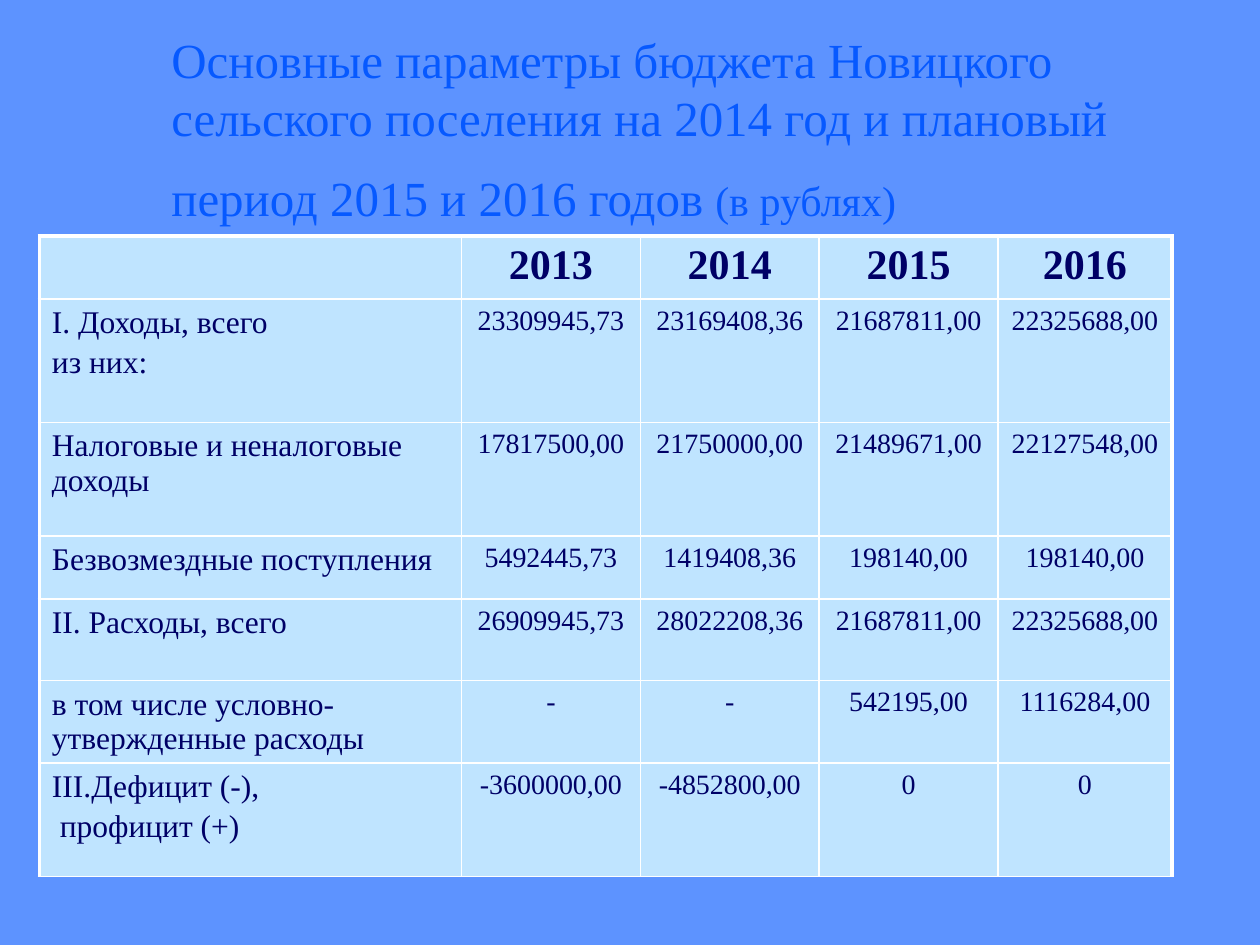
import pptx
import pptx.util
import pptx.dml.color
import pptx.enum.text
import pptx.oxml
import pptx.oxml.ns

Pt = pptx.util.Pt
ALIGN = pptx.enum.text.PP_ALIGN
FONT = "Times New Roman"
BACK, BLUE, NAVY, PALE, WHITE = "5D93FF", "0659FF", "000066", "BFE4FF", "FFFFFF"
WIDTHS = [241.2, 102.2, 102.2, 102.2, 99.4]
HEIGHTS = [36, 70.6, 64.8, 36, 46.8, 46.8, 64.8]
TITLE = [
    ("Основные параметры бюджета Новицкого сельского поселения "
     "на 2014 год и плановый период 2015 и 2016 годов ", 28),
    ("(в рублях)", 24),
    (" ", 40),
]
ROWS = [
    ["", "2013", "2014", "2015", "2016"],
    ["I. Доходы, всего\nиз них:",
     "23309945,73", "23169408,36", "21687811,00", "22325688,00"],
    ["Налоговые и неналоговые доходы",
     "17817500,00", "21750000,00", "21489671,00", "22127548,00"],
    ["Безвозмездные поступления",
     "5492445,73", "1419408,36", "198140,00", "198140,00"],
    ["II. Расходы, всего",
     "26909945,73", "28022208,36", "21687811,00", "22325688,00"],
    ["в том числе условно-утвержденные расходы",
     "-", "-", "542195,00", "1116284,00"],
    ["III.Дефицит (-),\nпрофицит (+)",
     "-3600000,00", "-4852800,00", "0", "0"],
]


def paint(color, code):
    """Set a color format from a hex string."""
    color.rgb = pptx.dml.color.RGBColor.from_string(code)


def style(font, size, code, bold=False):
    """Set the face, size, color and weight of a font."""
    font.name, font.size, font.bold = FONT, Pt(size), bold
    paint(font.color, code)


def fill(item, code):
    """Give a cell or background a solid fill."""
    item.fill.solid()
    paint(item.fill.fore_color, code)


def edge(cell, sides):
    """Draw white cell borders from a map of sides to widths."""
    props = cell._tc.get_or_add_tcPr()
    for spot, (side, width) in enumerate(sides.items()):
        props.insert(spot, pptx.oxml.parse_xml(
            f'<a:ln{side} {pptx.oxml.ns.nsdecls("a")} w="{Pt(width)}">'
            f'<a:solidFill><a:srgbClr val="{WHITE}"/></a:solidFill>'
            f'</a:ln{side}>'))


def head(slide, left, top, width, height):
    """Place the title in its box."""
    title = slide.shapes.title
    title.left, title.top = Pt(left), Pt(top)
    title.width, title.height = Pt(width), Pt(height)
    frame = title.text_frame
    frame.word_wrap = True
    frame.auto_size = pptx.enum.text.MSO_AUTO_SIZE.NONE
    frame.vertical_anchor = pptx.enum.text.MSO_ANCHOR.MIDDLE
    para = frame.paragraphs[0]
    para.alignment = ALIGN.LEFT
    for text, size in TITLE:
        run = para.add_run()
        run.text = text
        style(run.font, size, BLUE)


def write(cell, text, size, align, bold):
    """Fill a cell with paragraphs of one style."""
    cell.text_frame.text = text
    for spot, para in enumerate(cell.text_frame.paragraphs):
        para.alignment = align
        if spot:
            para.space_before = Pt(3)
        for run in para.runs:
            style(run.font, size, NAVY, bold)


def grid(slide, left, top, width, height):
    """Place the budget table in its box."""
    table = slide.shapes.add_table(
        len(ROWS), len(WIDTHS), Pt(left), Pt(top), Pt(width), Pt(height)).table
    table.horz_banding = False
    for col, size in zip(table.columns, WIDTHS):
        col.width = Pt(size)
    for row, size in zip(table.rows, HEIGHTS):
        row.height = Pt(size)
    last = len(WIDTHS) - 1
    for down, row in enumerate(ROWS):
        for across, text in enumerate(row):
            cell = table.cell(down, across)
            size = 24 if down == 0 else 16 if across else 18
            align = ALIGN.CENTER if across else ALIGN.LEFT
            write(cell, text, size, align, down == 0)
            fill(cell, PALE)
            edge(cell, {"L": 1 if across else 2.25,
                        "R": 2.25 if across == last else 1,
                        "T": 1 if down else 2.25,
                        "B": 1})
    final = table.cell(len(ROWS) - 1, 0).text_frame.paragraphs[-1]
    final._p.get_or_add_pPr().set("marL", str(Pt(4.5)))


def main():
    """Build and save the slide."""
    deck = pptx.Presentation()
    deck.slide_width, deck.slide_height = Pt(720), Pt(540)
    slide = deck.slides.add_slide(deck.slide_layouts[5])
    fill(slide.background, BACK)
    head(slide, 90.7, 16.6, 613.4, 115.2)
    grid(slide, 22.5, 134.8, sum(WIDTHS), sum(HEIGHTS))
    deck.save("out.pptx")


if __name__ == "__main__":
    main()
